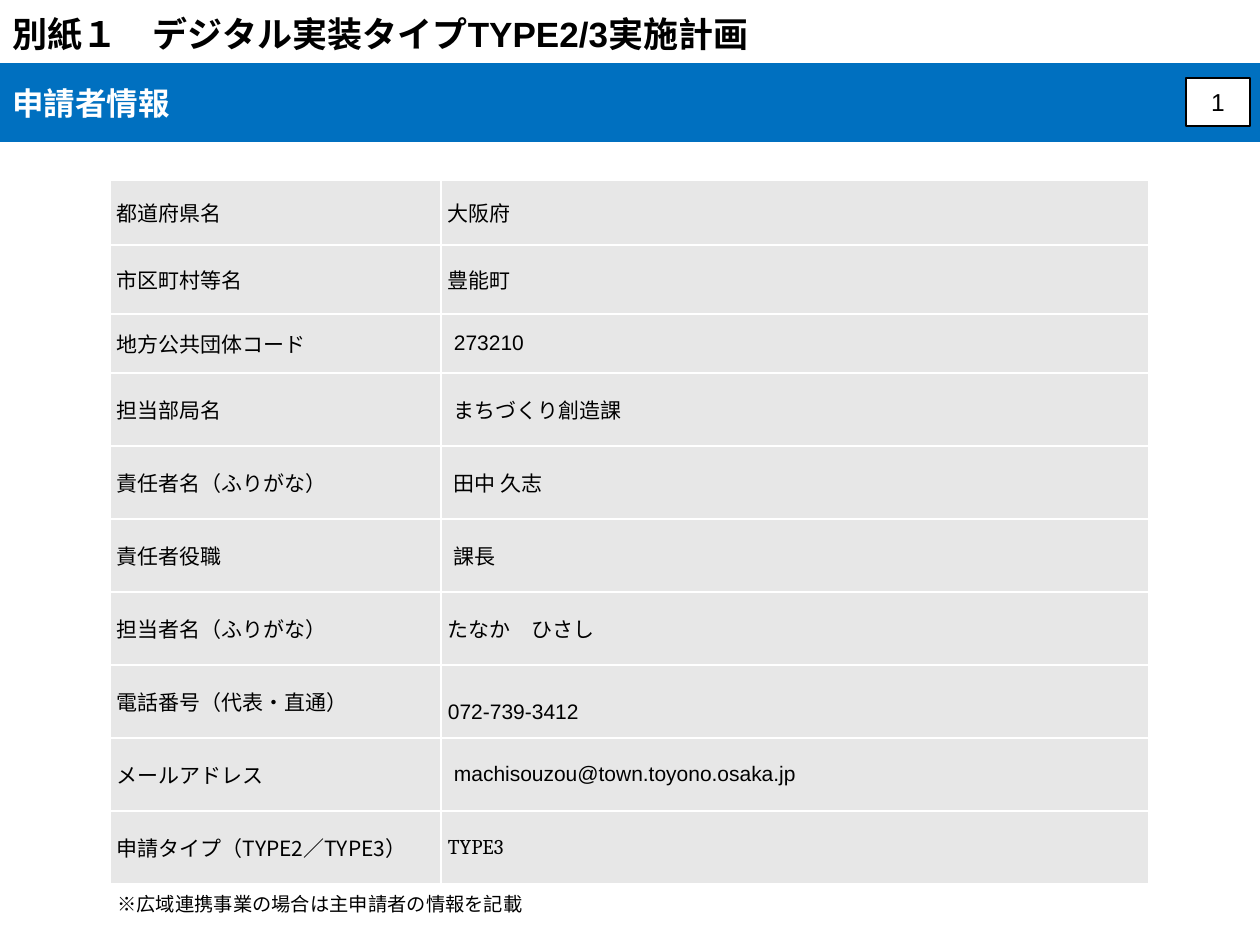
import lxml.etree
import pptx
import pptx.dml.color
import pptx.enum.shapes
import pptx.enum.text
import pptx.oxml.ns
import pptx.util

ALIGN = pptx.enum.text.PP_ALIGN
ANCHOR = pptx.enum.text.MSO_ANCHOR
AUTO_SIZE = pptx.enum.text.MSO_AUTO_SIZE
qn = pptx.oxml.ns.qn

EMU_PER_PX = 914400 / 126
GOTHIC = "Noto Sans CJK JP"
BLACK, WHITE, BLUE, GREY = "000000", "FFFFFF", "0070C0", "E7E7E7"

COLUMN_WIDTHS = [331, 708]
ROW_HEIGHTS = [65, 69, 59] + [73] * 7
CELL_INSET = 7
INDENT = 6

# Label, value, value font, extra left inset, top inset
APPLICANT_ROWS = [
    ("都道府県名", "大阪府", "Cambria", 0, 0),
    ("市区町村等名", "豊能町", "Cambria", 0, 0),
    ("地方公共団体コード", "273210", "Arial", INDENT, 0),
    ("担当部局名", "まちづくり創造課", "Arial", INDENT, 0),
    ("責任者名（ふりがな）", "田中 久志", "Arial", INDENT, 0),
    ("責任者役職", "課長", "Arial", INDENT, 0),
    ("担当者名（ふりがな）", "たなか　ひさし", "Cambria", 0, 0),
    ("電話番号（代表・直通）", "072-739-3412", "Arial", 0, 22),
    ("メールアドレス", "machisouzou@town.toyono.osaka.jp", "Arial", INDENT, 0),
    ("申請タイプ（TYPE2／TYPE3）", "TYPE3", "Cambria", 0, 0),
]


def px(length):
    return pptx.util.Emu(round(length * EMU_PER_PX))


def color(hex_code):
    return pptx.dml.color.RGBColor.from_string(hex_code)


def write(frame, text, size, font_name, hex_code=BLACK, bold=False, align=ALIGN.LEFT):
    frame.text = text
    para = frame.paragraphs[0]
    para.alignment = align
    font = para.font
    font.size = pptx.util.Pt(size)
    font.bold = bold
    font.color.rgb = color(hex_code)
    font.name = font_name
    # Japanese characters take their own typeface
    defaults = para._p.pPr.find(qn("a:defRPr"))
    lxml.etree.SubElement(defaults, qn("a:ea"), typeface=GOTHIC)


def add_title(page, text, left, top, width, height):
    title = page.shapes.title
    title.left, title.top, title.width, title.height = map(px, (left, top, width, height))
    frame = title.text_frame
    frame.auto_size = AUTO_SIZE.NONE
    frame.vertical_anchor = ANCHOR.TOP
    write(frame, text, 20, "Arial", bold=True)


def add_box(page, left, top, width, height, fill, line=None):
    box = page.shapes.add_shape(
        pptx.enum.shapes.MSO_SHAPE.RECTANGLE, *map(px, (left, top, width, height)))
    box.shadow.inherit = False
    box.fill.solid()
    box.fill.fore_color.rgb = color(fill)
    if line:
        box.line.color.rgb = color(line)
        box.line.width = pptx.util.Pt(0.75)
    else:
        box.line.fill.background()
    box.text_frame.vertical_anchor = ANCHOR.MIDDLE
    return box


def add_note(page, text, left, top, width, height):
    note = page.shapes.add_textbox(*map(px, (left, top, width, height)))
    note.text_frame.word_wrap = False
    write(note.text_frame, text, 11, "Arial")


def format_cell(cell, text, font_name, indent=0, top=0):
    cell.margin_left, cell.margin_right = px(CELL_INSET + indent), px(CELL_INSET)
    cell.margin_top, cell.margin_bottom = px(top), 0
    cell.vertical_anchor = ANCHOR.MIDDLE
    write(cell.text_frame, text, 12, font_name, align=ALIGN.JUSTIFY)
    properties = cell._tc.get_or_add_tcPr()
    for side in ("lnL", "lnR", "lnT", "lnB"):
        border = lxml.etree.SubElement(properties, qn("a:" + side), w="12700")
        fill = lxml.etree.SubElement(border, qn("a:solidFill"))
        lxml.etree.SubElement(fill, qn("a:srgbClr"), val=WHITE)
    cell.fill.solid()
    cell.fill.fore_color.rgb = color(GREY)


def add_applicant_table(page, left, top):
    table = page.shapes.add_table(
        len(ROW_HEIGHTS), len(COLUMN_WIDTHS), px(left), px(top),
        px(sum(COLUMN_WIDTHS)), px(sum(ROW_HEIGHTS))).table
    table.first_row = table.horz_banding = False
    for column, width in zip(table.columns, COLUMN_WIDTHS):
        column.width = px(width)
    for row, height, (label, value, font_name, indent, inset) in zip(
            table.rows, ROW_HEIGHTS, APPLICANT_ROWS):
        row.height = px(height)
        format_cell(row.cells[0], label, GOTHIC)
        format_cell(row.cells[1], value, font_name, indent, inset)


def main():
    deck = pptx.Presentation()
    deck.slide_width, deck.slide_height = px(1260), px(945)
    page = deck.slides.add_slide(deck.slide_layouts[5])

    # Applicant details
    add_applicant_table(page, 110, 180)

    # Heading and section band
    band = add_box(page, 0, 63, 1260, 79, BLUE)
    write(band.text_frame, "申請者情報", 18, GOTHIC, WHITE, bold=True)
    add_title(page, "別紙１　デジタル実装タイプTYPE2/3実施計画", 0, 6, 1106, 55)

    # Page number
    number = add_box(page, 1186, 78, 64, 48, WHITE, line=BLACK)
    write(number.text_frame, "1", 14, "Arial", align=ALIGN.CENTER)

    # Footnote
    add_note(page, "※広域連携事業の場合は主申請者の情報を記載", 105, 886, 431, 37)

    deck.save("out.pptx")


if __name__ == "__main__":
    main()
